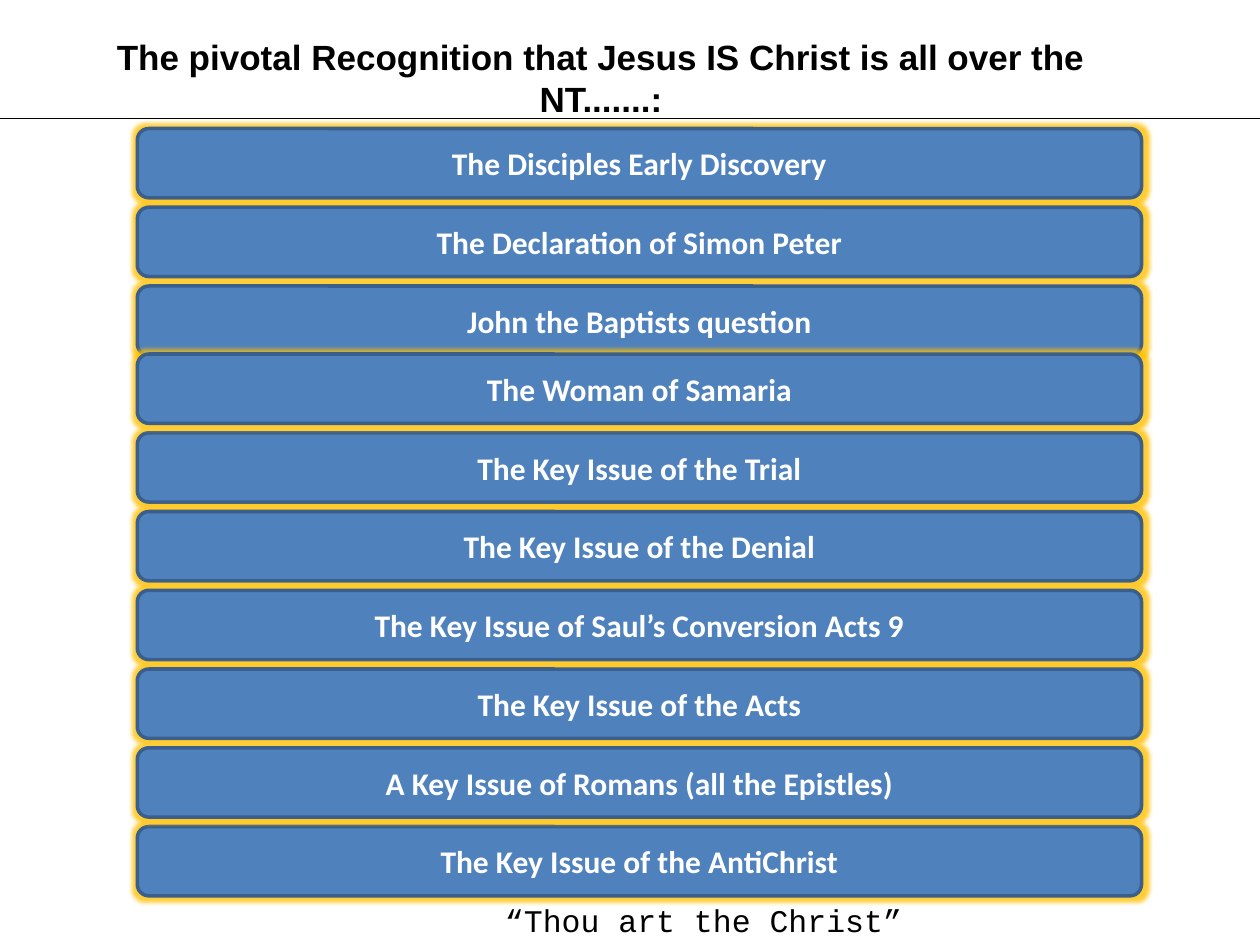
import lxml.etree
import pptx
import pptx.dml.color
import pptx.enum.shapes
import pptx.enum.text
import pptx.oxml.ns
import pptx.util

Inches = pptx.util.Inches
RGBColor = pptx.dml.color.RGBColor
BLACK = RGBColor(0x00, 0x00, 0x00)
WHITE = RGBColor(0xFF, 0xFF, 0xFF)
BLUE = RGBColor(0x4F, 0x81, 0xBD)
DARK_BLUE = RGBColor(0x3A, 0x5F, 0x8C)
GOLD = RGBColor(0xFF, 0xC0, 0x00)

TITLE_FONT = {"name": "Arial", "size": pptx.util.Pt(20), "bold": True}
TOPIC_FONT = {"name": "Calibri", "size": pptx.util.Pt(18), "bold": True}
QUOTE_FONT = {"name": "Courier New", "size": pptx.util.Pt(18), "bold": False}

TOPIC_PITCH = 0.625
EARLY_TOP = 1.02
LATER_TOP = 2.81
EARLY_TOPICS = [
    "The Disciples Early Discovery",
    "The Declaration of Simon Peter",
    "John the Baptists question",
]
LATER_TOPICS = [
    "The Woman of Samaria",
    "The Key Issue of the Trial",
    "The Key Issue of the Denial",
    "The Key Issue of Saul’s Conversion Acts 9",
    "The Key Issue of the Acts",
    "A Key Issue of Romans (all the Epistles)",
    "The Key Issue of the AntiChrist",
]
LATER_STACKING = [1, 2, 3, 4, 6, 5, 0]


def write_text(holder, text, font_format, color, alignment, anchor):
    frame = holder.text_frame
    frame.text = text
    frame.word_wrap = True
    frame.auto_size = pptx.enum.text.MSO_AUTO_SIZE.NONE
    frame.vertical_anchor = anchor
    paragraph = frame.paragraphs[0]
    paragraph.alignment = alignment
    font = paragraph.runs[0].font
    for attribute, value in font_format.items():
        setattr(font, attribute, value)
    font.color.rgb = color


def add_title(slide, text):
    heading = slide.shapes.title
    position = {"left": 0.37, "top": 0.23, "width": 8.8, "height": 0.44}
    for attribute, value in position.items():
        setattr(heading, attribute, Inches(value))
    write_text(heading, text, TITLE_FONT, BLACK,
               pptx.enum.text.PP_ALIGN.CENTER, pptx.enum.text.MSO_ANCHOR.TOP)


def add_rule(slide, top):
    rule = slide.shapes.add_connector(
        pptx.enum.shapes.MSO_CONNECTOR.STRAIGHT,
        Inches(0), Inches(top), Inches(10), Inches(top))
    rule.line.color.rgb = BLACK
    rule.line.width = pptx.util.Pt(0.75)
    lxml.etree.SubElement(rule._element.spPr, pptx.oxml.ns.qn("a:effectLst"))


def add_glow(topic):
    qn = pptx.oxml.ns.qn
    effects = topic._element.spPr.find(qn("a:effectLst"))
    glow = lxml.etree.SubElement(effects, qn("a:glow"), rad=str(pptx.util.Pt(5)))
    tint = lxml.etree.SubElement(glow, qn("a:srgbClr"), val=str(GOLD))
    lxml.etree.SubElement(tint, qn("a:alpha"), val="80000")


def add_topic(slide, text, top):
    topic = slide.shapes.add_shape(
        pptx.enum.shapes.MSO_SHAPE.ROUNDED_RECTANGLE,
        Inches(1.09), Inches(top), Inches(7.97), Inches(0.55))
    topic.fill.solid()
    topic.fill.fore_color.rgb = BLUE
    topic.line.color.rgb = DARK_BLUE
    topic.line.width = pptx.util.Pt(2)
    topic.shadow.inherit = False
    add_glow(topic)
    write_text(topic, text, TOPIC_FONT, WHITE,
               pptx.enum.text.PP_ALIGN.CENTER, pptx.enum.text.MSO_ANCHOR.MIDDLE)


def add_quote(slide, text):
    quote = slide.shapes.add_textbox(
        Inches(3.91), Inches(7.1), Inches(5), Inches(0.4))
    write_text(quote, text, QUOTE_FONT, BLACK,
               pptx.enum.text.PP_ALIGN.LEFT, pptx.enum.text.MSO_ANCHOR.TOP)


def main():
    deck = pptx.Presentation()
    deck.slide_width = Inches(10)
    deck.slide_height = Inches(7.5)
    slide = deck.slides.add_slide(deck.slide_layouts[5])

    add_quote(slide, "“Thou art the Christ”")
    add_title(slide, "The pivotal Recognition that Jesus IS Christ is all over the NT.......:")
    add_rule(slide, 0.94)
    for row, text in enumerate(EARLY_TOPICS):
        add_topic(slide, text, EARLY_TOP + row * TOPIC_PITCH)
    for row in LATER_STACKING:
        add_topic(slide, LATER_TOPICS[row], LATER_TOP + row * TOPIC_PITCH)

    deck.save("out.pptx")


if __name__ == "__main__":
    main()
